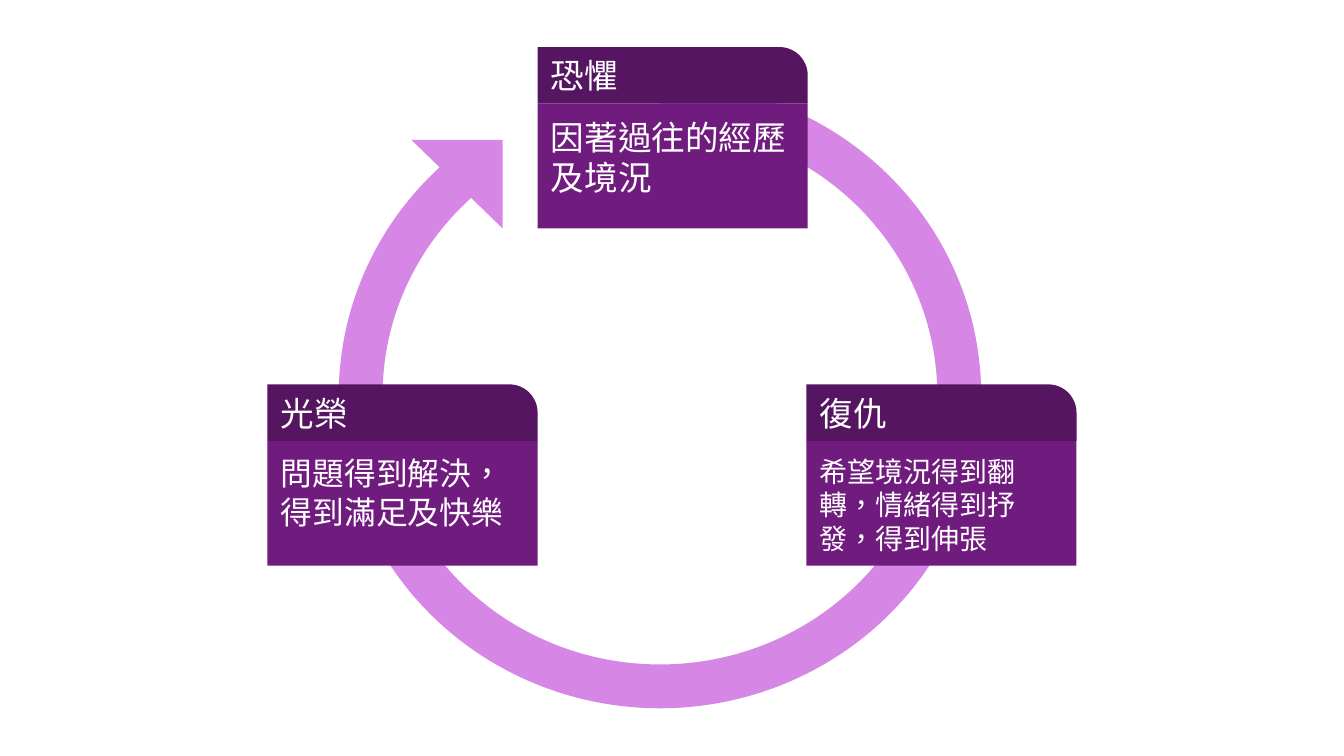
from pptx import Presentation
from pptx.dml.color import RGBColor
from pptx.enum import lang, shapes, text
from pptx.util import Inches, Pt

COLORS = {"ring": "D686E4", "body": "701C7F", "header": "551561", "text": "FFFFFF"}
SERIF, SANS = "Times New Roman", "Roboto"

# Cards: left, top, heading, description, description size and font
CARDS = [
    (6, 2.86, "復仇", "希望境況得到翻轉，情緒得到抒發，得到伸張", 15, SANS),
    (4, 0.35, "恐懼", "因著過往的經歷及境況", 18, SERIF),
    (1.99, 2.86, "光榮", "問題得到解決，得到滿足及快樂", 17, SERIF),
]
CARD_W, HEADER_H, BODY_H = 2.01, 0.42, 0.93
MARGIN = 0.1
SLIDE_W = 10

prs = Presentation()
prs.slide_width, prs.slide_height = Inches(SLIDE_W), Inches(SLIDE_W * 9 / 16)
s = prs.slides.add_slide(prs.slide_layouts[6])


def add_shape(kind, box, color, adjustments=(), rotation=0):
    sp = s.shapes.add_shape(kind, *map(Inches, box))
    sp.shadow.inherit = False
    sp.fill.solid()
    sp.fill.fore_color.rgb = RGBColor.from_string(COLORS[color])
    sp.line.fill.background()
    sp.rotation = rotation
    for i, value in enumerate(adjustments):
        sp.adjustments[i] = value
    return sp


def set_text(sp, content, size=18, font=SERIF, anchor=text.MSO_ANCHOR.TOP):
    tf = sp.text_frame
    tf.word_wrap = True
    tf.vertical_anchor = anchor
    tf.margin_left = tf.margin_right = Inches(MARGIN)
    tf.margin_top = tf.margin_bottom = Inches(MARGIN)
    p = tf.paragraphs[0]
    p.alignment = text.PP_ALIGN.LEFT
    # Keep punctuation inside the text area
    p._p.get_or_add_pPr().set("hangingPunct", "0")
    r = p.add_run()
    r.text = content
    r.font.size = Pt(size)
    r.font.name = font
    r.font.language_id = lang.MSO_LANGUAGE_ID.TRADITIONAL_CHINESE
    r.font.color.rgb = RGBColor.from_string(COLORS["text"])


# Circular arrow: ring and head
kinds = shapes.MSO_SHAPE
add_shape(kinds.BLOCK_ARC, (2.52, 0.61, 4.78, 4.66), "ring", (54, 30.13, 0.07), 180)
add_shape(kinds.RIGHT_TRIANGLE, (3.06, 1.04, 0.68, 0.66), "ring", rotation=180)

# Cards: description below, rounded heading above
for left, top, heading, description, size, font in CARDS:
    body = add_shape(kinds.RECTANGLE, (left, top + HEADER_H, CARD_W, BODY_H), "body")
    set_text(body, description, size=size, font=font)
    header = add_shape(kinds.ROUND_1_RECTANGLE, (left, top, CARD_W, HEADER_H),
                       "header", (0.5,))
    set_text(header, heading, anchor=text.MSO_ANCHOR.MIDDLE)

prs.save("out.pptx")
